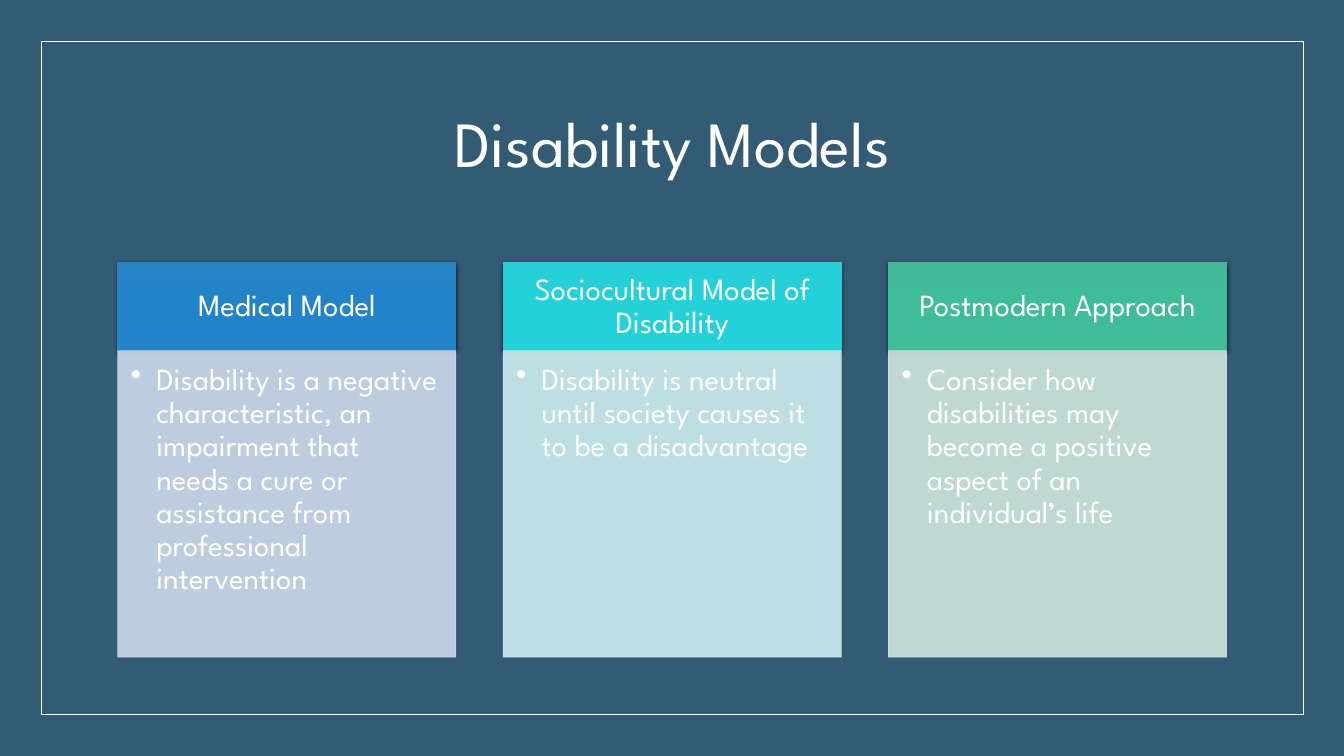
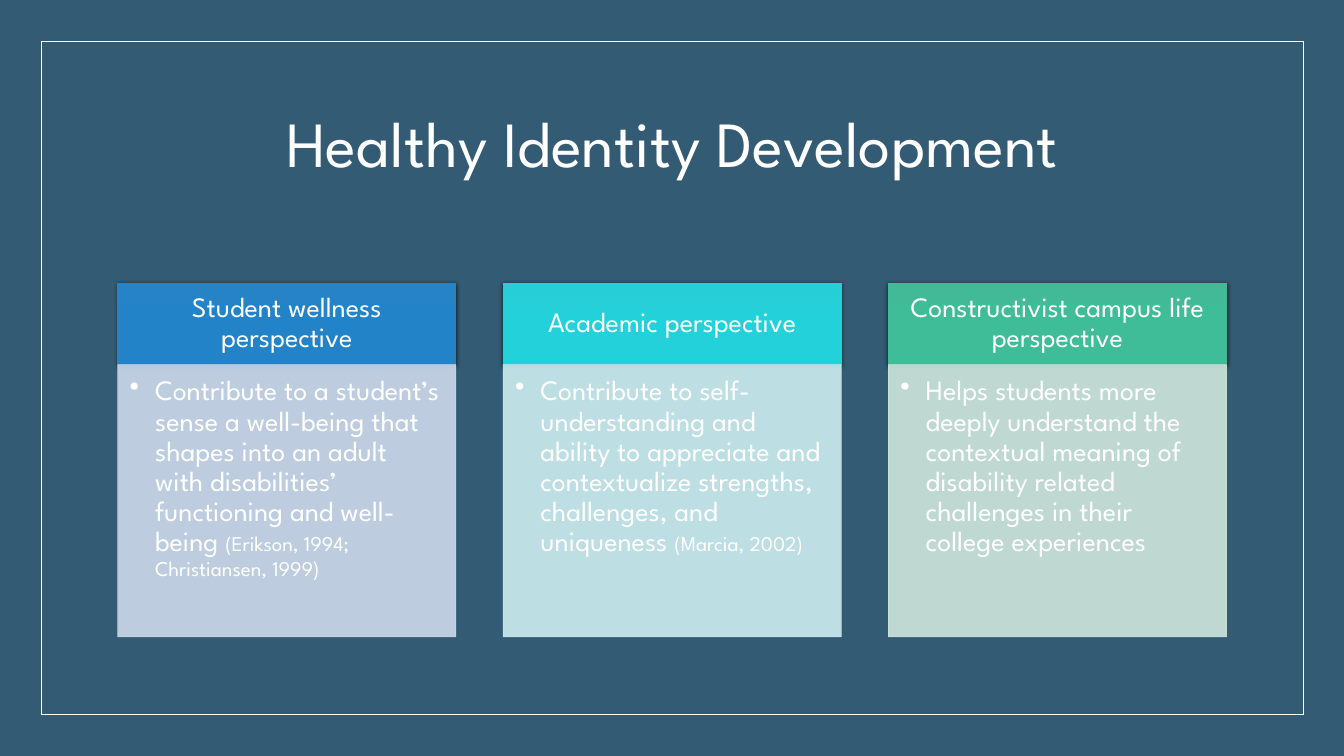
from copy import deepcopy

from lxml.etree import SubElement
from pptx import Presentation
from pptx.dml.color import RGBColor
from pptx.enum.shapes import MSO_SHAPE as Shape
from pptx.enum.text import MSO_ANCHOR as Anchor, PP_ALIGN as Align
from pptx.oxml.ns import qn
from pptx.util import Cm, Pt

COLORS = {
    "background": "335B74",
    "white": "FFFFFF",
    "shadow": "000000",
    "blue": ("2683C6", "2283C9", "2282C8"),
    "cyan": ("27CED7", "22D1DA", "22D0D9"),
    "green": ("42BA97", "3FBC98", "3EBB97"),
    "blue_tint": "CDD9EA",
    "cyan_tint": "CDEDF0",
    "green_tint": "CFE7DD",
}
HUES = ("blue", "cyan", "green")
FONT = "League Spartan"
MARGIN, COLUMN_WIDTH, COLUMN_STEP = 2.97, 8.52, 9.71

SLIDES = [
    {
        "title": "Disability Models",
        "layout": {"top": 6.62, "head": 2.22, "body": 7.72, "size": 22},
        "cards": [
            ("Medical Model",
             ["Disability is a negative characteristic, an impairment that needs a cure "
              "or assistance from professional intervention"]),
            ("Sociocultural Model of Disability",
             ["Disability is neutral until society causes it to be a disadvantage"]),
            ("Postmodern Approach",
             ["Consider how disabilities may become a positive aspect of an "
              "individual’s life"]),
        ],
    },
    {
        "title": "Healthy Identity Development",
        "layout": {"top": 7.13, "head": 2.06, "body": 6.86, "size": 20},
        "cards": [
            ("Student wellness perspective",
             ["Contribute to a student’s sense a well-being that shapes into an adult "
              "with disabilities’ functioning and well-being ",
              "(Erikson, 1994; Christiansen, 1999)"]),
            ("Academic perspective",
             ["Contribute to self-understanding and ability to appreciate and "
              "contextualize strengths, challenges, and uniqueness ",
              "(Marcia, 2002)"]),
            ("Constructivist campus life perspective",
             ["Helps students more deeply understand the contextual meaning of "
              "disability related challenges in their college experiences"]),
        ],
    },
]


def rgb(value):
    return RGBColor.from_string(value)


class CardDeck:
    """Hold the shared style and the current slide."""

    def __init__(self):
        self.deck = Presentation()
        self.deck.slide_width, self.deck.slide_height = Cm(33.87), Cm(19.05)
        fill = self.deck.slide_master.background.fill
        fill.solid()
        fill.fore_color.rgb = rgb(COLORS["background"])
        self.page = None

    def add_page(self, title):
        self.page = self.deck.slides.add_slide(self.deck.slide_layouts[6])
        frame = self.rectangle(1.04, 1.04, 31.8, 16.97, COLORS["white"])
        frame.fill.background()
        box = self.page.shapes.add_textbox(Cm(MARGIN), Cm(1.78), Cm(27.94), Cm(3.81))
        self.set_text(box, [title], 46, Anchor.MIDDLE, Align.CENTER)

    def rectangle(self, left, top, width, height, line):
        box = self.page.shapes.add_shape(
            Shape.RECTANGLE, Cm(left), Cm(top), Cm(width), Cm(height))
        box.shadow.inherit = False
        box.line.color.rgb = rgb(line)
        box.line.width = Pt(0.5)
        return box

    def set_text(self, box, texts, size, anchor, align, insets=None, bullet=False):
        frame = box.text_frame
        frame.word_wrap = True
        frame.vertical_anchor = anchor
        if insets:
            (frame.margin_left, frame.margin_top,
             frame.margin_right, frame.margin_bottom) = [Cm(size * rate) for rate in insets]
        para = frame.paragraphs[0]
        para.alignment = align
        para.line_spacing = 0.9
        if bullet:
            properties = para._p.get_or_add_pPr()
            properties.set("marL", str(Cm(0.64)))
            properties.set("indent", str(-Cm(0.64)))
            SubElement(properties, qn("a:buChar"), char="•")
        para.font.name = FONT
        para.font.size = Pt(size)
        para.font.color.rgb = rgb(COLORS["white"])
        for index, text in enumerate(texts):
            span = para.add_run()
            span.text = text
            if index:
                span.font.size = Pt(15)

    def gradient(self, box, colors):
        box.fill.gradient()
        box.fill.gradient_angle = 270
        stop_list = box._element.spPr.find(qn("a:gradFill")).find(qn("a:gsLst"))
        stop_list.insert(1, deepcopy(stop_list[0]))
        for stop, color, position in zip(box.fill.gradient_stops, colors, (0, 0.5, 1)):
            stop.color.rgb = rgb(color)
            stop.position = position

    def drop_shadow(self, box):
        effects = box._element.spPr.find(qn("a:effectLst"))
        shadow = SubElement(effects, qn("a:outerShdw"), blurRad=str(Pt(3)),
                            dist=str(Pt(1)), dir="5400000", rotWithShape="0")
        color = SubElement(shadow, qn("a:srgbClr"), val=COLORS["shadow"])
        SubElement(color, qn("a:alpha"), val="63000")

    def header(self, left, top, height, text, size, hue):
        box = self.rectangle(left, top, COLUMN_WIDTH, height, COLORS[hue][0])
        self.gradient(box, COLORS[hue])
        self.drop_shadow(box)
        self.set_text(box, [text], size, Anchor.MIDDLE, Align.CENTER,
                      (0.02, 0.01, 0.02, 0.01))

    def body(self, left, top, height, texts, size, hue):
        tint = COLORS[f"{hue}_tint"]
        box = self.rectangle(left, top, COLUMN_WIDTH, height, tint)
        box.fill.solid()
        box.fill.fore_color.rgb = rgb(tint)
        for color in box._element.spPr.iter(qn("a:srgbClr")):
            SubElement(color, qn("a:alpha"), val="90000")
        self.set_text(box, texts, size, Anchor.TOP, Align.LEFT,
                      (0.015, 0.015, 0.02, 0.02), bullet=True)

    def cards(self, cards, top, head, body, size):
        for index, (hue, (heading, texts)) in enumerate(zip(HUES, cards)):
            left = MARGIN + index * COLUMN_STEP
            self.header(left, top, head, heading, size, hue)
            self.body(left, top + head, body, texts, size, hue)


def main():
    builder = CardDeck()
    for content in SLIDES:
        builder.add_page(content["title"])
        builder.cards(content["cards"], **content["layout"])
    builder.deck.save("out.pptx")


if __name__ == "__main__":
    main()
